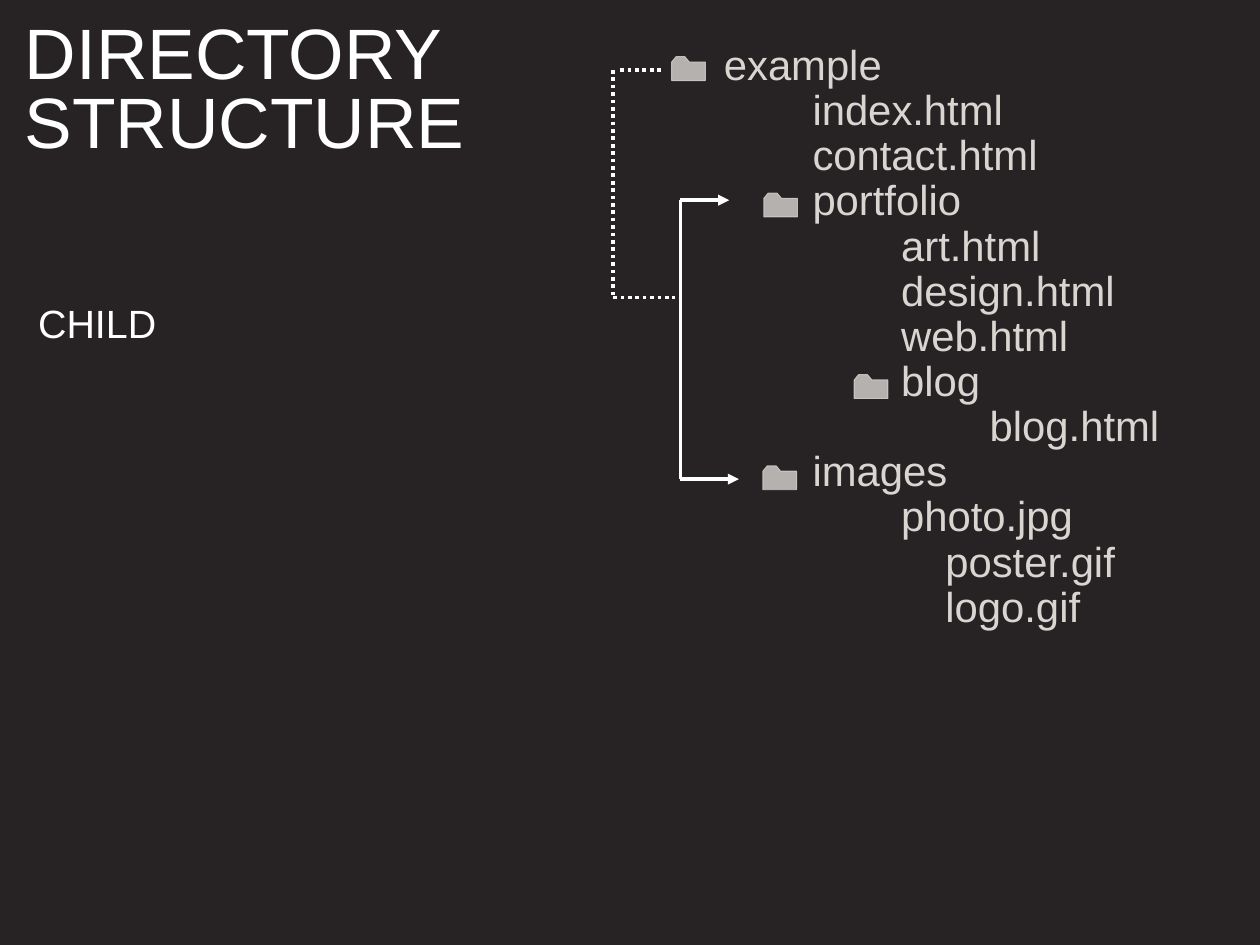
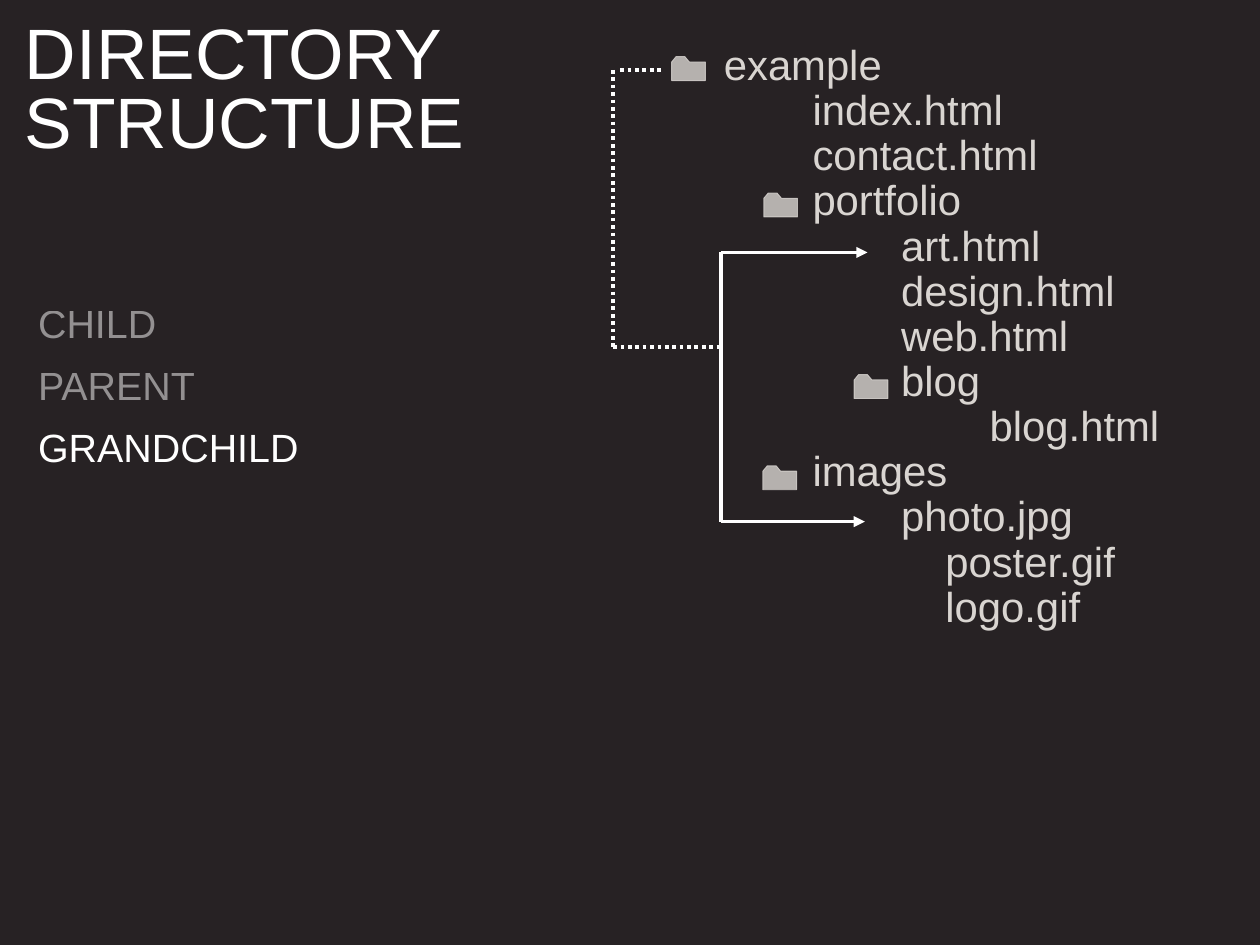
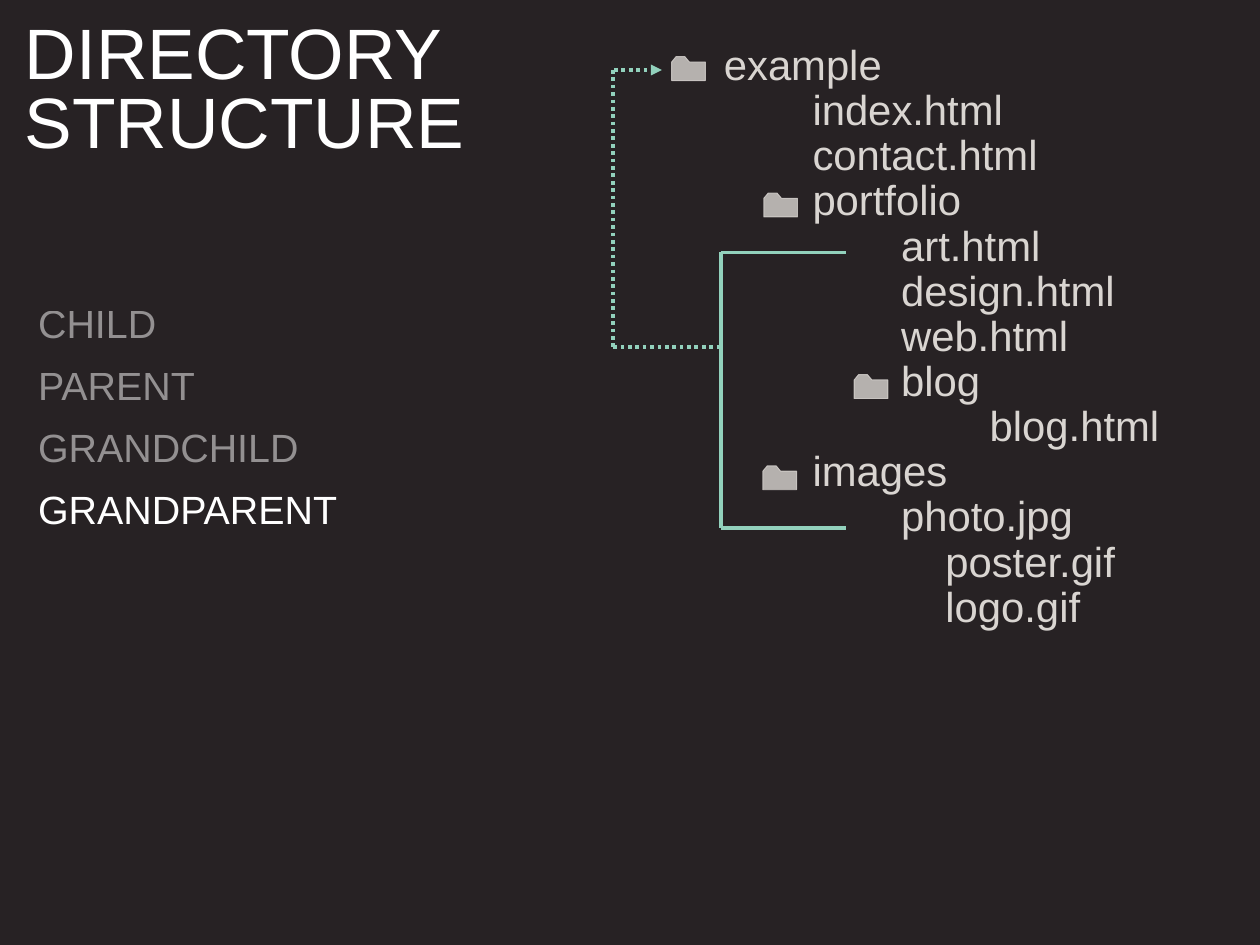
"""Build the directory structure slides."""
from dataclasses import dataclass

from lxml.etree import SubElement
from pptx import Presentation
from pptx.dml.color import RGBColor
from pptx.enum.dml import MSO_LINE
from pptx.enum.shapes import MSO_CONNECTOR
from pptx.enum.text import MSO_ANCHOR, MSO_AUTO_SIZE, PP_ALIGN
from pptx.oxml.ns import qn
from pptx.util import Pt

PX = 9144
FONT = "Arial"
COLORS = {"ground": "272224", "white": "FFFFFF", "tree": "D9D5D1", "mint": "92D1BC"}
INDENT = 50
FOLDER_OUTLINE = [(38, 27), (38, 6), (20, 6), (15, 0), (5, 0), (0, 6), (0, 27)]
TERMS = ["CHILD", "PARENT", "GRANDCHILD", "GRANDPARENT"]
TERM_STEP = 69.6


@dataclass(frozen=True)
class Entry:
    """A line of the directory tree, indented by half-tab steps."""
    name: str
    steps: int = 0


@dataclass(frozen=True)
class Point:
    """A position in px."""
    x: int
    y: int


@dataclass(frozen=True)
class Relation:
    """One slide: the terms shown so far and the bracket for the last one."""
    term_count: int
    color: str
    root_start: int
    link_end: int
    link_y: int
    bracket_x: int
    upper_target: Point
    lower_target: Point
    points_to_root: bool = False


TREE = [
    Entry("example"), Entry("index.html", 2), Entry("contact.html", 2),
    Entry("portfolio", 2), Entry("art.html", 4), Entry("design.html", 4),
    Entry("web.html", 4), Entry("blog", 4), Entry("blog.html", 6),
    Entry("images", 2), Entry("photo.jpg", 4), Entry("poster.gif", 5),
    Entry("logo.gif", 5),
]
FOLDERS = [Point(964, 423), Point(862, 218), Point(758, 64), Point(861, 526)]
ROOT = Point(747, 79)
TRUNK_X = 692
RELATIONS = [
    Relation(1, "white", 700, 762, 336, 768, Point(823, 226), Point(834, 541)),
    Relation(3, "white", 700, 814, 392, 814, Point(979, 285), Point(976, 589)),
    Relation(4, "mint", 693, 814, 392, 814, Point(955, 285), Point(955, 596), True),
]


def paint(fill, color: str, opacity: int = 100) -> None:
    """Make a fill solid in a named colour with an opacity in percent."""
    fill.solid()
    fill.fore_color.rgb = RGBColor.from_string(COLORS[color])
    if opacity < 100:
        choice = next(fill._xPr.iter(qn("a:srgbClr")))
        SubElement(choice, qn("a:alpha"), val=str(opacity * 1000))


def place(shape, left: int, top: int, width: int, height: int) -> None:
    """Move and size a shape in px."""
    shape.left, shape.top = left * PX, top * PX
    shape.width, shape.height = width * PX, height * PX


def write_text(shape, entries: list[Entry], *, size: int, color: str,
               opacity: int = 100, spacing: float = 1.0,
               anchor: MSO_ANCHOR = MSO_ANCHOR.TOP) -> None:
    """Fill a shape with formatted, unbulleted paragraphs."""
    frame = shape.text_frame
    frame.word_wrap = True
    frame.auto_size = MSO_AUTO_SIZE.NONE
    frame.vertical_anchor = anchor
    frame.margin_left = frame.margin_right = frame.margin_top = frame.margin_bottom = 0
    for index, entry in enumerate(entries):
        paragraph = frame.add_paragraph() if index else frame.paragraphs[0]
        paragraph.alignment = PP_ALIGN.LEFT
        paragraph.line_spacing = spacing
        paragraph.space_before = paragraph.space_after = Pt(0)
        properties = paragraph._p.get_or_add_pPr()
        properties.set("marL", str(entry.steps * INDENT * PX))
        properties.set("indent", "0")
        SubElement(properties, qn("a:buNone"))
        run = paragraph.add_run()
        run.text = entry.name
        run.font.name, run.font.size = FONT, Pt(size)
        paint(run.font.fill, color, opacity)


def draw_line(slide, start: Point, end: Point, color: str, *,
              dotted: bool = False, arrow: bool = False) -> None:
    """Draw a straight line, dotted or with an arrowhead at its end."""
    connector = slide.shapes.add_connector(
        MSO_CONNECTOR.STRAIGHT, start.x * PX, start.y * PX, end.x * PX, end.y * PX)
    connector.line.width = Pt(3)
    paint(connector.line.fill, color)
    if dotted:
        connector.line.dash_style = MSO_LINE.ROUND_DOT
    if arrow:
        SubElement(connector.line._get_or_add_ln(), qn("a:tailEnd"), type="triangle")
    SubElement(connector._element.spPr, qn("a:effectLst"))


def draw_folder(slide, corner: Point) -> None:
    """Draw a folder icon at its top left corner."""
    outline = [(corner.x + x, corner.y + y) for x, y in FOLDER_OUTLINE]
    builder = slide.shapes.build_freeform(*outline[0], scale=PX)
    builder.add_line_segments(outline[1:], close=True)
    folder = builder.convert_to_shape()
    folder.shadow.inherit = False
    paint(folder.fill, "tree", 80)
    folder.line.width = Pt(0)
    paint(folder.line.fill, "tree", 80)


def draw_terms(slide, count: int) -> None:
    """List the terms so far, with all but the last one dimmed."""
    for index, term in enumerate(TERMS[:count]):
        label = slide.shapes.add_textbox(0, 0, 0, 0)
        place(label, 43, 333 + round(index * TERM_STEP), 472, 64)
        write_text(label, [Entry(term)], size=32, color="white",
                   opacity=100 if index == count - 1 else 50,
                   anchor=MSO_ANCHOR.MIDDLE)


def draw_relation(slide, relation: Relation) -> None:
    """Join the root folder to the bracket around the related entries."""
    color = relation.color
    trunk_end = Point(TRUNK_X, relation.link_y)
    draw_line(slide, Point(relation.root_start, ROOT.y), ROOT, color,
              dotted=True, arrow=relation.points_to_root)
    draw_line(slide, trunk_end, Point(relation.link_end, relation.link_y), color, dotted=True)
    draw_line(slide, Point(TRUNK_X, ROOT.y), trunk_end, color, dotted=True)
    targets = (relation.upper_target, relation.lower_target)
    corners = [Point(relation.bracket_x, target.y) for target in targets]
    for corner, target in zip(corners, targets):
        draw_line(slide, corner, target, color, arrow=not relation.points_to_root)
    draw_line(slide, *corners, color)


def build_slide(presentation, relation: Relation) -> None:
    """Add one slide with title, terms, tree and bracket."""
    slide = presentation.slides.add_slide(presentation.slide_layouts[1])
    title, tree = slide.shapes.title, slide.placeholders[1]
    place(title, 28, 28, 511, 197)
    write_text(title, [Entry("DIRECTORY"), Entry("STRUCTURE")],
               size=58, color="white", spacing=0.8)
    place(tree, 817, 50, 496, 670)
    write_text(tree, TREE, size=34, color="tree", spacing=0.9)
    draw_terms(slide, relation.term_count)
    for corner in FOLDERS:
        draw_folder(slide, corner)
    draw_relation(slide, relation)


def main() -> None:
    """Build and save the presentation."""
    presentation = Presentation()
    presentation.slide_width, presentation.slide_height = 1422 * PX, 1067 * PX
    paint(presentation.slide_master.background.fill, "ground")
    for relation in RELATIONS:
        build_slide(presentation, relation)
    presentation.save("out.pptx")


if __name__ == "__main__":
    main()
